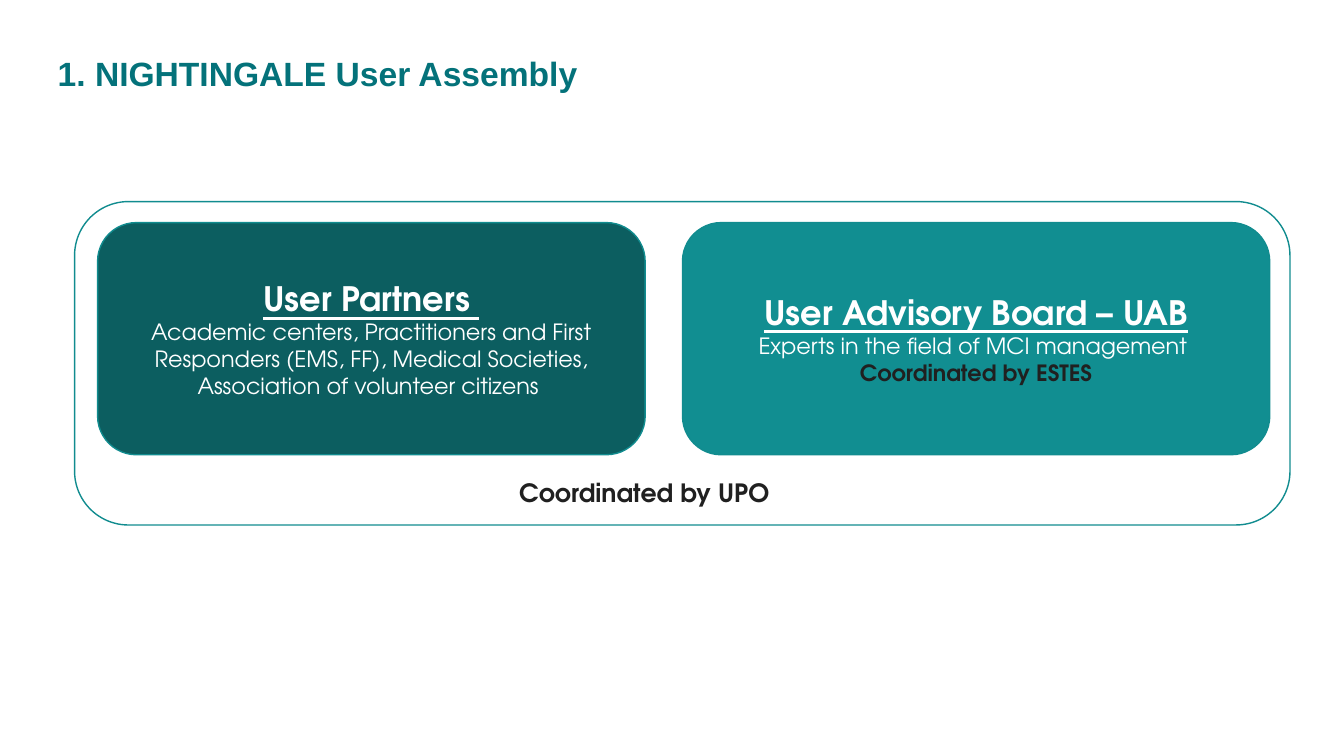
"""Build the NIGHTINGALE User Assembly slide."""
import pptx
import pptx.util
import pptx.dml.color
import pptx.enum.shapes
import pptx.enum.text

Cm = pptx.util.Cm
ALIGN = pptx.enum.text.PP_ALIGN
MIDDLE = pptx.enum.text.MSO_ANCHOR.MIDDLE
FONT = "TeX Gyre Adventor"
WHITE, DARK, TEAL = "FFFFFF", "202020", "118C8F"


def paint(color, code):
    color.rgb = pptx.dml.color.RGBColor.from_string(code)


def write(para, text, size=16, color=WHITE, font=FONT, bold=False,
          under=False, align=ALIGN.CENTER):
    para.alignment = align
    run = para.add_run()
    run.text = text
    run.font.name = font
    run.font.size = pptx.util.Pt(size)
    run.font.bold = bold
    run.font.underline = under
    paint(run.font.color, color)


deck = pptx.Presentation()
deck.slide_width, deck.slide_height = Cm(33.87), Cm(19.05)
slide = deck.slides.add_slide(deck.slide_layouts[5])

title = slide.shapes.title
title.left, title.top, title.width, title.height = Cm(1.2), Cm(1.02), Cm(30.35), Cm(1.75)
title.text_frame.vertical_anchor = MIDDLE
head = title.text_frame.paragraphs[0]
head.line_spacing = 0.9
write(head, "1. NIGHTINGALE User Assembly", size=24, color="04727A",
      font="Arial", bold=True, align=ALIGN.LEFT)

big = {"size": 24, "bold": True, "under": True}
cards = [
    (2.46, 5.61, 13.8, 5.85, "0C5E60", [
        ("User Partners ", big),
        ("Academic centers, Practitioners and First Responders (EMS, FF), "
         "Medical Societies, Association of volunteer citizens ", {})]),
    (17.2, 5.61, 14.8, 5.85, "118E91", [
        ("User Advisory Board – UAB", big),
        ("Experts in the field of MCI management ", {}),
        ("Coordinated by ESTES", {"color": DARK, "bold": True})]),
    (1.88, 5.08, 30.63, 8.15, None, []),
]
for left, top, width, height, fill, lines in cards:
    card = slide.shapes.add_shape(
        pptx.enum.shapes.MSO_SHAPE.ROUNDED_RECTANGLE,
        Cm(left), Cm(top), Cm(width), Cm(height))
    card.shadow.inherit = False
    if fill:
        card.fill.solid()
        paint(card.fill.fore_color, fill)
    else:
        card.fill.background()
    card.line.width = pptx.util.Pt(1)
    paint(card.line.color, TEAL)
    frame = card.text_frame
    frame.word_wrap = True
    frame.vertical_anchor = MIDDLE
    for i, (text, style) in enumerate(lines):
        para = frame.add_paragraph() if i else frame.paragraphs[0]
        write(para, text, **style)

note = slide.shapes.add_textbox(Cm(7.77), Cm(11.91), Cm(16.94), Cm(1.02)).text_frame
note.word_wrap = True
note.auto_size = pptx.enum.text.MSO_AUTO_SIZE.SHAPE_TO_FIT_TEXT
write(note.paragraphs[0], "Coordinated by UPO", size=18, color=DARK, bold=True)

deck.save("out.pptx")
